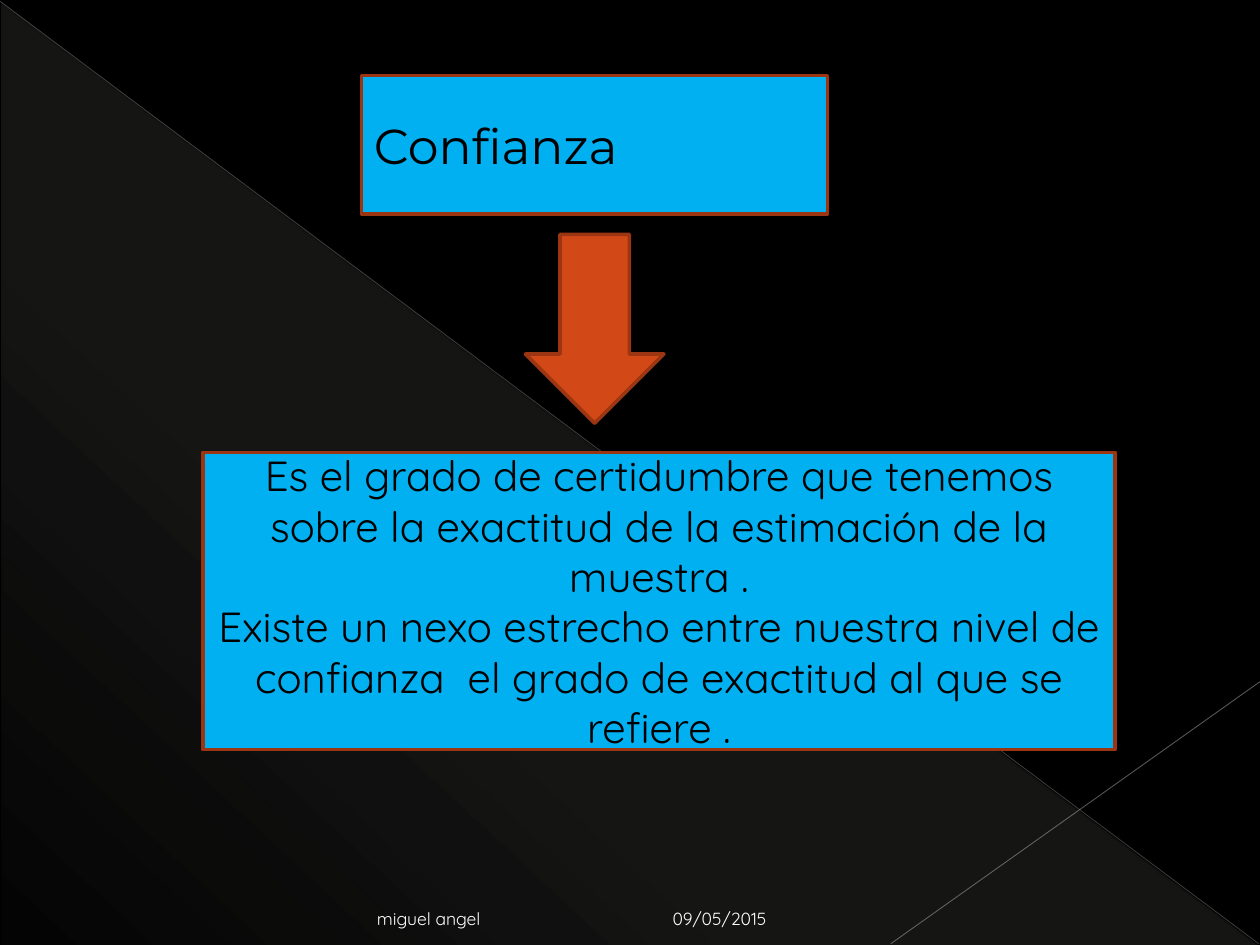
from lxml.etree import SubElement
from pptx import Presentation
from pptx.dml.color import RGBColor
from pptx.enum.shapes import MSO_CONNECTOR, MSO_SHAPE
from pptx.enum.text import MSO_ANCHOR, PP_ALIGN
from pptx.oxml.ns import qn
from pptx.util import Inches, Pt

# Content
TITLE = ["Confianza"]
DEFINITION = [
    "Es el grado de certidumbre que tenemos sobre la exactitud de la estimación de la muestra .",
    "Existe un nexo estrecho entre nuestra nivel de confianza  el grado de exactitud al que se refiere .",
]
AUTHOR = ["miguel angel"]
DATE = ["09/05/2015"]

# Style
BLACK = RGBColor(0x00, 0x00, 0x00)
WHITE = RGBColor(0xFF, 0xFF, 0xFF)
BLUE = RGBColor(0x00, 0xB0, 0xF0)
ORANGE = RGBColor(0xD3, 0x48, 0x17)
RUST = RGBColor(0x9C, 0x35, 0x11)
CREAM = RGBColor(0xE9, 0xE5, 0xDC)
HEADING_FONT, BODY_FONT = "Montserrat", "Quicksand"

# Layout in inches
WIDTH, HEIGHT = 10, 7.5
AXIS = 4.72  # shared centre of the title and the arrow
TITLE_WIDTH, ARROW_WIDTH = 3.7, 1.1
FOOTER_TOP, FOOTER_HEIGHT = 7.09, 0.33
TRIANGLE_STOPS = [(0, 10), (70, 8), (100, 1)]  # position and opacity, percent
TRIANGLE_ANGLE = 133
DECOR_LINES = [
    ((0, 0.01), (9.99, 7.49), RGBColor(0xC1, 0xBE, 0xBE), 0.39, 35),
    ((10, 5.41), (7.07, 7.49), RGBColor(0xC7, 0xC5, 0xC5), 0.47, 45),
]


def set_opacity(color_element, percent):
    SubElement(color_element, qn("a:alpha"), val=str(percent * 1000))


def add_decor_line(slide, start, end, color, width, opacity):
    line = slide.shapes.add_connector(
        MSO_CONNECTOR.STRAIGHT, *(Inches(value) for value in start + end))
    line.line.color.rgb = color
    line.line.width = Pt(width)
    properties = line._element.spPr
    set_opacity(properties.find(".//" + qn("a:srgbClr")), opacity)
    SubElement(properties, qn("a:effectLst"))


def add_triangle(slide):
    triangle = slide.shapes.add_shape(
        MSO_SHAPE.RIGHT_TRIANGLE, Inches(0.01), Inches(0.02), Inches(9.98), Inches(7.48))
    triangle.line.fill.background()
    triangle.fill.background()
    properties = triangle._element.spPr
    no_fill = properties.find(qn("a:noFill"))
    gradient = no_fill.makeelement(qn("a:gradFill"), {"rotWithShape": "1"})
    properties.replace(no_fill, gradient)
    stops = SubElement(gradient, qn("a:gsLst"))
    for position, opacity in TRIANGLE_STOPS:
        stop = SubElement(stops, qn("a:gs"), pos=str(position * 1000))
        set_opacity(SubElement(stop, qn("a:srgbClr"), val=str(CREAM)), opacity)
    SubElement(gradient, qn("a:lin"), ang=str(TRIANGLE_ANGLE * 60000), scaled="0")
    triangle.shadow.inherit = False


def add_outlined_shape(slide, kind, left, top, width, height, color):
    shape = slide.shapes.add_shape(
        kind, Inches(left), Inches(top), Inches(width), Inches(height))
    shape.shadow.inherit = False
    shape.fill.solid()
    shape.fill.fore_color.rgb = color
    shape.line.color.rgb = RUST
    shape.line.width = Pt(2)
    return shape


def write_text(shape, paragraphs, size, font=BODY_FONT, color=BLACK,
               align=PP_ALIGN.LEFT, anchor=MSO_ANCHOR.MIDDLE):
    frame = shape.text_frame
    frame.word_wrap = True
    frame.vertical_anchor = anchor
    for index, text in enumerate(paragraphs):
        paragraph = frame.add_paragraph() if index else frame.paragraphs[0]
        paragraph.alignment = align
        run = paragraph.add_run()
        run.text = text
        run.font.size = Pt(size)
        run.font.name = font
        run.font.color.rgb = color


def add_footer(slide, paragraphs, left, width, align):
    box = slide.shapes.add_textbox(
        Inches(left), Inches(FOOTER_TOP), Inches(width), Inches(FOOTER_HEIGHT))
    write_text(box, paragraphs, size=10, color=WHITE, align=align, anchor=MSO_ANCHOR.BOTTOM)


def main():
    presentation = Presentation()
    presentation.slide_width, presentation.slide_height = Inches(WIDTH), Inches(HEIGHT)
    slide = presentation.slides.add_slide(presentation.slide_layouts[6])

    # Background decoration
    slide.background.fill.solid()
    slide.background.fill.fore_color.rgb = BLACK
    add_triangle(slide)
    for decor_line in DECOR_LINES:
        add_decor_line(slide, *decor_line)

    # Title, arrow and definition
    title = add_outlined_shape(
        slide, MSO_SHAPE.RECTANGLE, AXIS - TITLE_WIDTH / 2, 0.6, TITLE_WIDTH, 1.1, BLUE)
    write_text(title, TITLE, size=28, font=HEADING_FONT)
    add_outlined_shape(
        slide, MSO_SHAPE.DOWN_ARROW, AXIS - ARROW_WIDTH / 2, 1.86, ARROW_WIDTH, 1.5, ORANGE)
    definition = add_outlined_shape(
        slide, MSO_SHAPE.RECTANGLE, 1.61, 3.59, 7.24, 2.36, BLUE)
    write_text(definition, DEFINITION, size=24, align=PP_ALIGN.CENTER)

    # Footer
    add_footer(slide, DATE, 5.24, 2.33, PP_ALIGN.LEFT)
    add_footer(slide, AUTHOR, 0.5, 3.41, PP_ALIGN.RIGHT)

    presentation.save("out.pptx")


if __name__ == "__main__":
    main()
